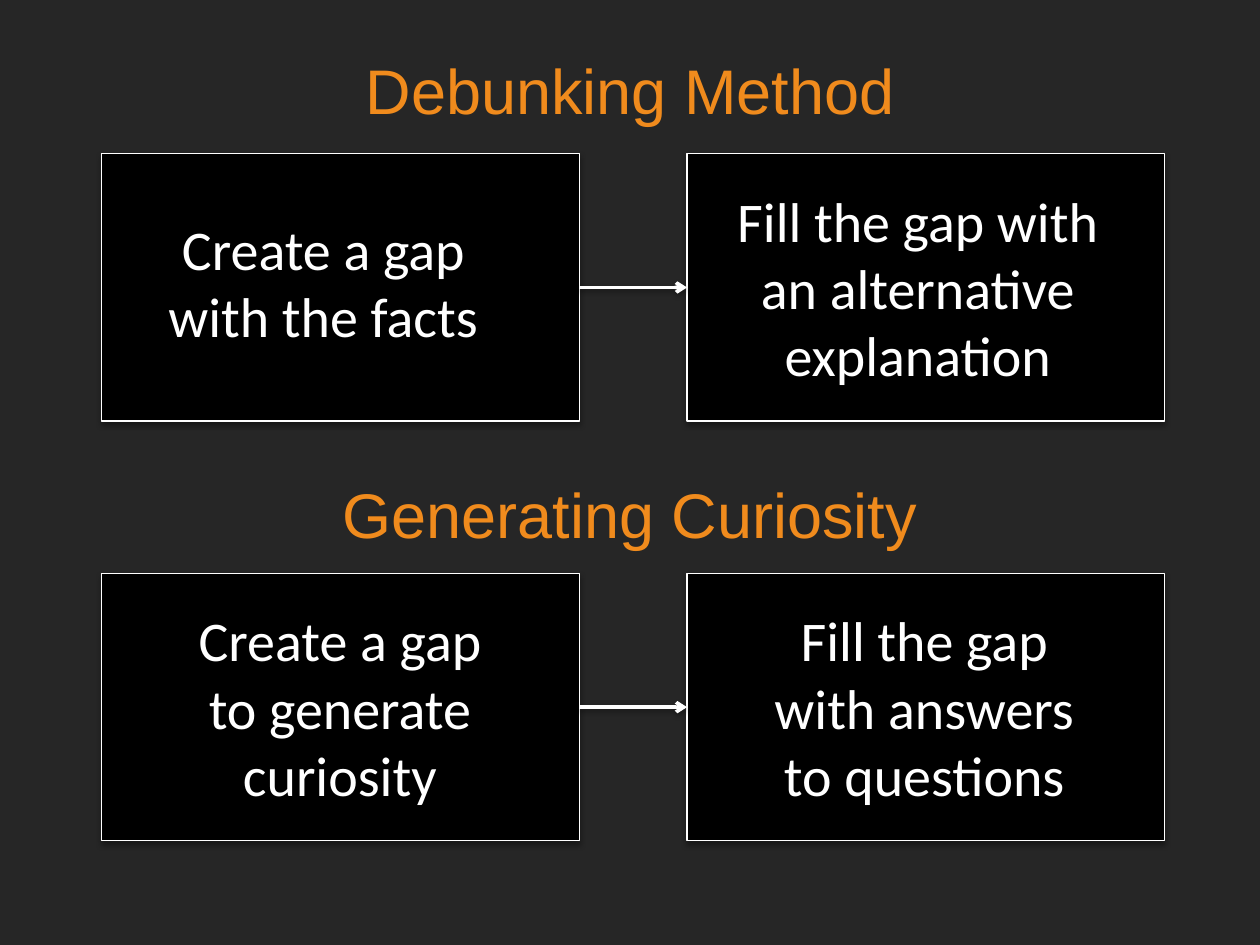
from lxml.etree import SubElement
from pptx import Presentation
from pptx.dml.color import RGBColor
from pptx.enum.shapes import MSO_CONNECTOR as CONN, MSO_SHAPE as SHAPE
from pptx.enum.text import MSO_AUTO_SIZE as AUTO, PP_ALIGN as ALIGN
from pptx.oxml.ns import qn
from pptx.util import Cm, Pt

BACKGROUND = RGBColor(0x26, 0x26, 0x26)
BLACK = RGBColor(0x00, 0x00, 0x00)
WHITE = RGBColor(0xFF, 0xFF, 0xFF)
ORANGE = RGBColor(0xF0, 0x8B, 0x1D)

SLIDE_W, SLIDE_H = 25.4, 19.05
BOX_W, BOX_H = 9.63, 5.39
LEFT_X, RIGHT_X = 2.05, 13.85

SECTIONS = [
    ("Debunking Method", 0.91, 3.1, [
        ("Create a gap with the facts", (2.95, 4.19, 7.14, 3.2)),
        ("Fill the gap with an alternative explanation", (14.43, 3.63, 8.15, 4.06)),
    ]),
    ("Generating Curiosity", 9.47, 11.56, [
        ("Create a gap to generate curiosity", (3.4, 12.09, 6.91, 4.57)),
        ("Fill the gap with answers to questions", (15.09, 12.09, 7.09, 4.24)),
    ]),
]


def write(tf, text, font="Calibri", size=32, color=WHITE, before=0):
    p = tf.paragraphs[0]
    p.alignment = ALIGN.CENTER
    p.space_before = Pt(before)
    r = p.add_run()
    r.text = text
    r.font.name = font
    r.font.size = Pt(size)
    r.font.color.rgb = color


class Deck:
    def __init__(self):
        self.prs = Presentation()
        self.prs.slide_width, self.prs.slide_height = Cm(SLIDE_W), Cm(SLIDE_H)
        self.s = self.prs.slides.add_slide(self.prs.slide_layouts[6])
        fill = self.s.background.fill
        fill.solid()
        fill.fore_color.rgb = BACKGROUND

    def shadow(self, sp, dist, alpha):
        effects = SubElement(sp._element.spPr, qn("a:effectLst"))
        outer = SubElement(effects, qn("a:outerShdw"), blurRad="40000", dist=str(dist),
                           dir="5400000", rotWithShape="0")
        color = SubElement(outer, qn("a:srgbClr"), val=str(BLACK))
        SubElement(color, qn("a:alpha"), val=str(alpha * 1000))

    def box(self, x, y):
        sp = self.s.shapes.add_shape(SHAPE.RECTANGLE, Cm(x), Cm(y), Cm(BOX_W), Cm(BOX_H))
        sp.fill.solid()
        sp.fill.fore_color.rgb = BLACK
        sp.line.color.rgb = WHITE
        sp.line.width = Pt(0.75)
        self.shadow(sp, dist=23000, alpha=35)
        return sp

    def arrow(self, start, end):
        sp = self.s.shapes.add_connector(CONN.STRAIGHT, 0, 0, 0, 0)
        sp.begin_connect(start, 3)
        sp.end_connect(end, 1)
        sp.line.color.rgb = WHITE
        sp.line.width = Pt(2)
        SubElement(sp.line._get_or_add_ln(), qn("a:tailEnd"), type="arrow")
        self.shadow(sp, dist=20000, alpha=38)

    def text(self, text, x, y, w, h, auto=AUTO.NONE, **style):
        tf = self.s.shapes.add_textbox(Cm(x), Cm(y), Cm(w), Cm(h)).text_frame
        tf.word_wrap = True
        tf.auto_size = auto
        write(tf, text, **style)

    def title(self, text, y):
        self.text(text, 0, y, SLIDE_W, 1.8, auto=AUTO.SHAPE_TO_FIT_TEXT,
                  font="Arial", size=36, color=ORANGE)


def main():
    deck = Deck()
    for title, title_y, box_y, steps in SECTIONS:
        deck.title(title, title_y)
        deck.arrow(deck.box(LEFT_X, box_y), deck.box(RIGHT_X, box_y))
        for text, place in steps:
            deck.text(text, *place, before=2)
    deck.prs.save("out.pptx")


if __name__ == "__main__":
    main()
